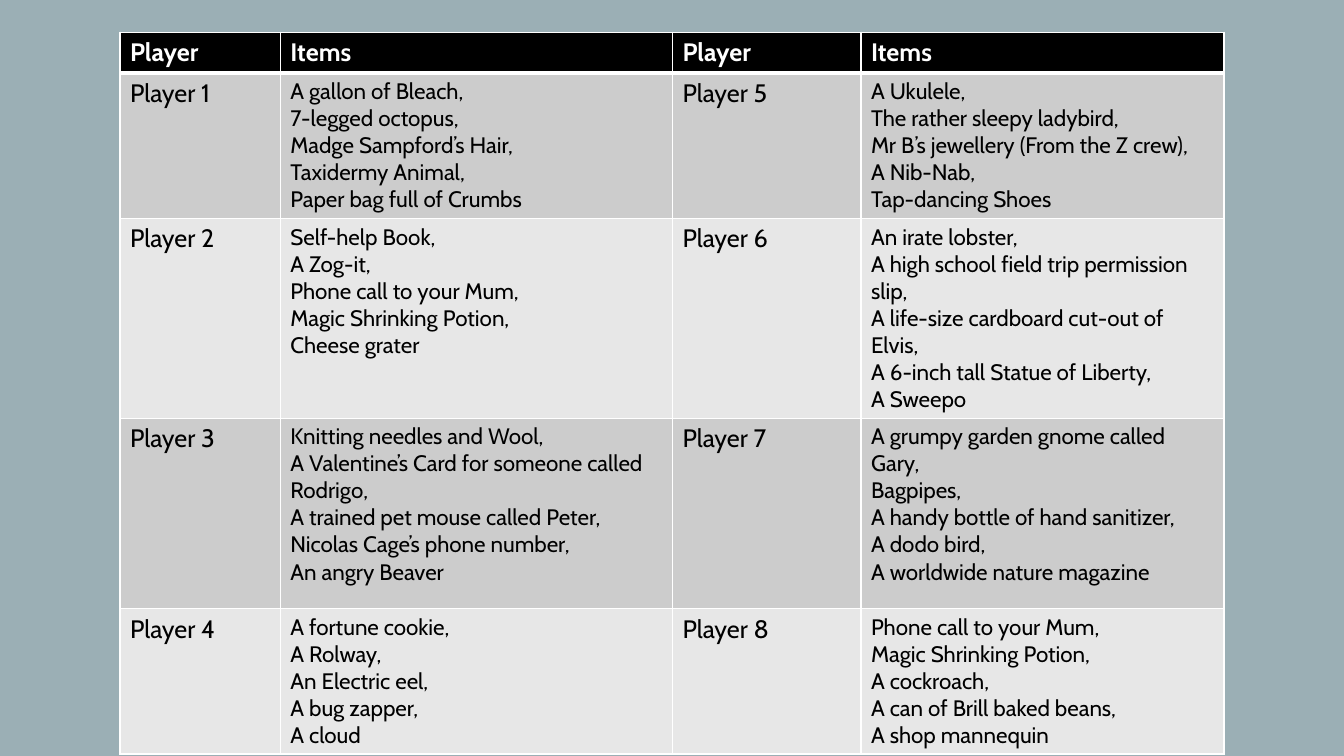
import pptx
import pptx.dml.color
import pptx.oxml
import pptx.oxml.ns
import pptx.util
from pptx.util import Inches, Pt

FONT = "Cabin"
BACKGROUND = "9BAFB5"
BORDER = "FFFFFF"
HEADER_FILL = "000000"
BAND_FILLS = ["CCCCCC", "E7E7E7"]
LEFT, TOP, WIDTH, HEIGHT = 1.19, 0.32, 10.95, 6.86
COLUMN_WIDTHS = [1.59, 3.89, 1.87, 3.6]
ROW_HEIGHTS = [0.34, 1.43, 1.65, 1.89, 1.2]

HEADINGS = ["Player", "Items"]
PLAYER_ITEMS = [
    ["A gallon of Bleach,", "7-legged octopus,", "Madge Sampford’s Hair,",
     "Taxidermy Animal,", "Paper bag full of Crumbs"],
    ["Self-help Book,", "A Zog-it,", "Phone call to your Mum,",
     "Magic Shrinking Potion,", "Cheese grater"],
    ["Knitting needles and Wool,", "A Valentine’s Card for someone called Rodrigo,",
     "A trained pet mouse called Peter,", "Nicolas Cage’s phone number,",
     "An angry Beaver"],
    ["A fortune cookie,", "A Rolway,", "An Electric eel,", "A bug zapper,", "A cloud"],
    ["A Ukulele,", "The rather sleepy ladybird,",
     "Mr B’s jewellery (From the Z crew),", "A Nib-Nab,", "Tap-dancing Shoes"],
    ["An irate lobster,", "A high school field trip permission slip,",
     "A life-size cardboard cut-out of Elvis,",
     "A 6-inch tall Statue of Liberty,", "A Sweepo"],
    ["A grumpy garden gnome called Gary,", "Bagpipes,",
     "A handy bottle of hand sanitizer,", "A dodo bird,",
     "A worldwide nature magazine"],
    ["Phone call to your Mum,", "Magic Shrinking Potion,", "A cockroach,",
     "A can of Brill baked beans,", "A shop mannequin"],
]


def color(value):
    return pptx.dml.color.RGBColor.from_string(value)


def set_borders(cell, widths):
    properties = cell._tc.get_or_add_tcPr()
    for position, (side, width) in enumerate(widths.items()):
        line = pptx.oxml.parse_xml(
            f'<a:{side} {pptx.oxml.ns.nsdecls("a")} w="{Pt(width)}">'
            f'<a:solidFill><a:srgbClr val="{BORDER}"/></a:solidFill></a:{side}>')
        properties.insert(position, line)


def fill_cell(cell, lines, size, fill, ink="000000", bold=False, top=1, bottom=1):
    cell.fill.solid()
    cell.fill.fore_color.rgb = color(fill)
    set_borders(cell, {"lnL": 1, "lnR": 1, "lnT": top, "lnB": bottom})
    cell.text = "\n".join(lines)
    for para in cell.text_frame.paragraphs:
        para.font.name = FONT
        para.font.size = Pt(size)
        para.font.bold = bold
        para.font.color.rgb = color(ink)


def main():
    deck = pptx.Presentation()
    deck.slide_width, deck.slide_height = Inches(13.33), Inches(7.5)
    page = deck.slides.add_slide(deck.slide_layouts[6])
    page.background.fill.solid()
    page.background.fill.fore_color.rgb = color(BACKGROUND)

    table = page.shapes.add_table(
        len(ROW_HEIGHTS), len(COLUMN_WIDTHS),
        Inches(LEFT), Inches(TOP), Inches(WIDTH), Inches(HEIGHT)).table
    for column, width in zip(table.columns, COLUMN_WIDTHS):
        column.width = Inches(width)
    for row, height in zip(table.rows, ROW_HEIGHTS):
        row.height = Inches(height)

    for column, heading in enumerate(HEADINGS * 2):
        fill_cell(table.cell(0, column), [heading], 18, HEADER_FILL,
                  ink="FFFFFF", bold=True, bottom=3)

    players_per_side = len(ROW_HEIGHTS) - 1
    for index, items in enumerate(PLAYER_ITEMS):
        side, band = divmod(index, players_per_side)
        fill = BAND_FILLS[band % 2]
        top = 3 if band == 0 else 1
        fill_cell(table.cell(band + 1, side * 2), [f"Player {index + 1}"], 18, fill, top=top)
        fill_cell(table.cell(band + 1, side * 2 + 1), items, 16, fill, top=top)

    deck.save("out.pptx")


if __name__ == "__main__":
    main()
